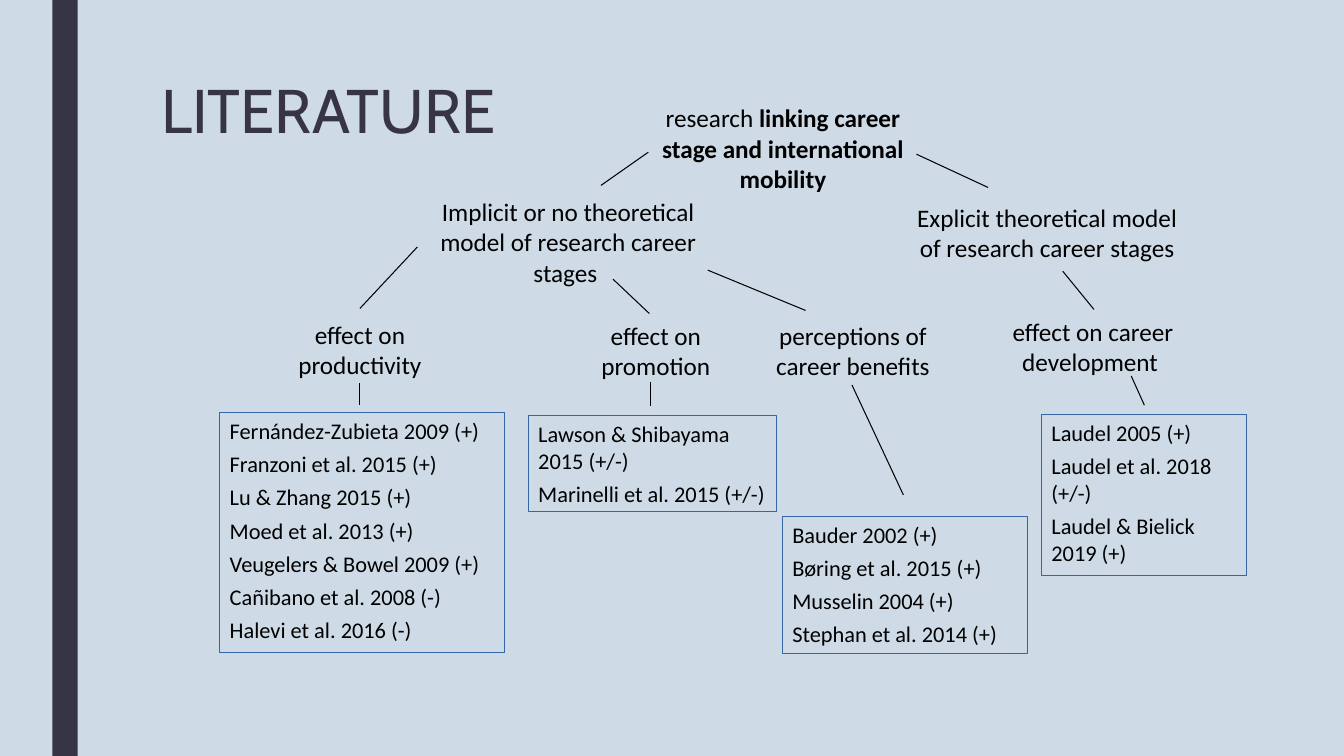
from dataclasses import dataclass

from lxml.etree import SubElement
from pptx import Presentation
from pptx.dml.color import RGBColor
from pptx.enum.shapes import MSO_CONNECTOR as Connector, MSO_SHAPE as Preset
from pptx.enum.text import MSO_ANCHOR as Anchor, PP_ALIGN as Align
from pptx.oxml.ns import qn
from pptx.slide import Slide
from pptx.util import Emu, Pt

PX = 9144  # 100 px to the inch
BACKGROUND = RGBColor(0xCE, 0xDB, 0xE6)
DARK = RGBColor(0x37, 0x35, 0x45)
BLACK = RGBColor(0, 0, 0)
BLUE = RGBColor(0x34, 0x65, 0xA4)
TITLE_FONT = "Cabin"
BODY_FONT = "Calibri"


@dataclass
class Topic:
    left: int
    top: int
    width: int
    height: int
    text: str
    bold_text: str = ""


@dataclass
class Studies:
    left: int
    top: int
    width: int
    height: int
    citations: list[str]


@dataclass
class Branch:
    x1: int
    y1: int
    x2: int
    y2: int


TOPICS = [
    Topic(627, 97, 299, 87, "research ", "linking career stage and international mobility"),
    Topic(414, 190, 299, 87, "Implicit or no theoretical model of research career stages "),
    Topic(889, 196, 299, 87, "Explicit theoretical model of research career stages"),
    Topic(243, 312, 228, 87, "effect on productivity"),
    Topic(544, 313, 213, 84, "effect on promotion"),
    Topic(732, 313, 228, 87, "perceptions of career benefits"),
    Topic(970, 309, 228, 87, "effect on career development "),
]

STUDIES = [
    Studies(218, 409, 282, 238, [
        "Fernández-Zubieta 2009 (+)",
        "Franzoni et al. 2015 (+)",
        "Lu & Zhang 2015 (+)",
        "Moed et al. 2013 (+)",
        "Veugelers & Bowel 2009 (+)",
        "Cañibano et al. 2008 (-)",
        "Halevi et al. 2016 (-)",
    ]),
    Studies(524, 412, 246, 95, [
        "Lawson & Shibayama 2015 (+/-)",
        "Marinelli et al. 2015 (+/-)",
    ]),
    Studies(776, 512, 243, 136, [
        "Bauder 2002 (+)",
        "Børing et al. 2015 (+)",
        "Musselin 2004 (+)",
        "Stephan et al. 2014 (+)",
    ]),
    Studies(1033, 411, 203, 160, [
        "Laudel 2005 (+)",
        "Laudel et al. 2018 (+/-)",
        "Laudel & Bielick 2019 (+)",
    ]),
]

BRANCHES = [
    Branch(643, 151, 596, 184),
    Branch(909, 153, 980, 186),
    Branch(414, 245, 357, 306),
    Branch(608, 277, 644, 311),
    Branch(702, 268, 799, 308),
    Branch(1054, 269, 1085, 307),
    Branch(357, 380, 357, 402),
    Branch(645, 379, 645, 403),
    Branch(845, 382, 896, 491),
    Branch(1122, 373, 1135, 402),
]


def px(*lengths: int) -> list[Emu]:
    return [Emu(length * PX) for length in lengths]


def set_font(para, name: str, size: int, color: RGBColor) -> None:
    para.font.name = name
    para.font.size = Pt(size)
    para.font.color.rgb = color


def add_bar(page: Slide) -> None:
    bar = page.shapes.add_shape(Preset.RECTANGLE, *px(52, 0, 25, 750))
    bar.shadow.inherit = False
    bar.fill.solid()
    bar.fill.fore_color.rgb = DARK
    bar.line.fill.background()


def format_title(page: Slide) -> None:
    title = page.shapes.title
    title.left, title.top, title.width, title.height = px(150, 75, 1050, 162)
    title.text_frame.text = "LITERATURE"
    title.text_frame.vertical_anchor = Anchor.TOP
    para = title.text_frame.paragraphs[0]
    para.alignment = Align.LEFT
    para.line_spacing = 0.89
    set_font(para, TITLE_FONT, 44, DARK)


def add_topic(page: Slide, topic: Topic) -> None:
    box = page.shapes.add_textbox(*px(topic.left, topic.top, topic.width, topic.height))
    box.text_frame.word_wrap = True
    para = box.text_frame.paragraphs[0]
    para.alignment = Align.CENTER
    para.space_before, para.space_after = Pt(4.5), Pt(12)
    set_font(para, BODY_FONT, 18, BLACK)
    para.add_run().text = topic.text
    if topic.bold_text:
        span = para.add_run()
        span.text = topic.bold_text
        span.font.bold = True


def add_studies(page: Slide, studies: Studies) -> None:
    box = page.shapes.add_shape(
        Preset.RECTANGLE, *px(studies.left, studies.top, studies.width, studies.height))
    box.shadow.inherit = False
    box.fill.background()
    box.line.color.rgb = BLUE
    box.line.width = Pt(0.75)
    frame = box.text_frame
    frame.word_wrap = True
    frame.vertical_anchor = Anchor.TOP
    frame.text = "\n".join(studies.citations)
    for para in frame.paragraphs:
        para.alignment = Align.LEFT
        para.space_before = Pt(4.5)
        set_font(para, BODY_FONT, 16, BLACK)


def add_branch(page: Slide, branch: Branch) -> None:
    line = page.shapes.add_connector(
        Connector.STRAIGHT, *px(branch.x1, branch.y1, branch.x2, branch.y2))
    line.line.color.rgb = BLACK
    line.line.width = Pt(0.75)
    SubElement(line._element.spPr, qn("a:effectLst"))


def main() -> None:
    deck = Presentation()
    deck.slide_width, deck.slide_height = px(1333, 750)
    page = deck.slides.add_slide(deck.slide_layouts.get_by_name("Title Only"))
    page.background.fill.solid()
    page.background.fill.fore_color.rgb = BACKGROUND
    add_bar(page)
    format_title(page)
    for topic in TOPICS:
        add_topic(page, topic)
    for studies in STUDIES:
        add_studies(page, studies)
    for branch in BRANCHES:
        add_branch(page, branch)
    deck.save("out.pptx")


if __name__ == "__main__":
    main()
